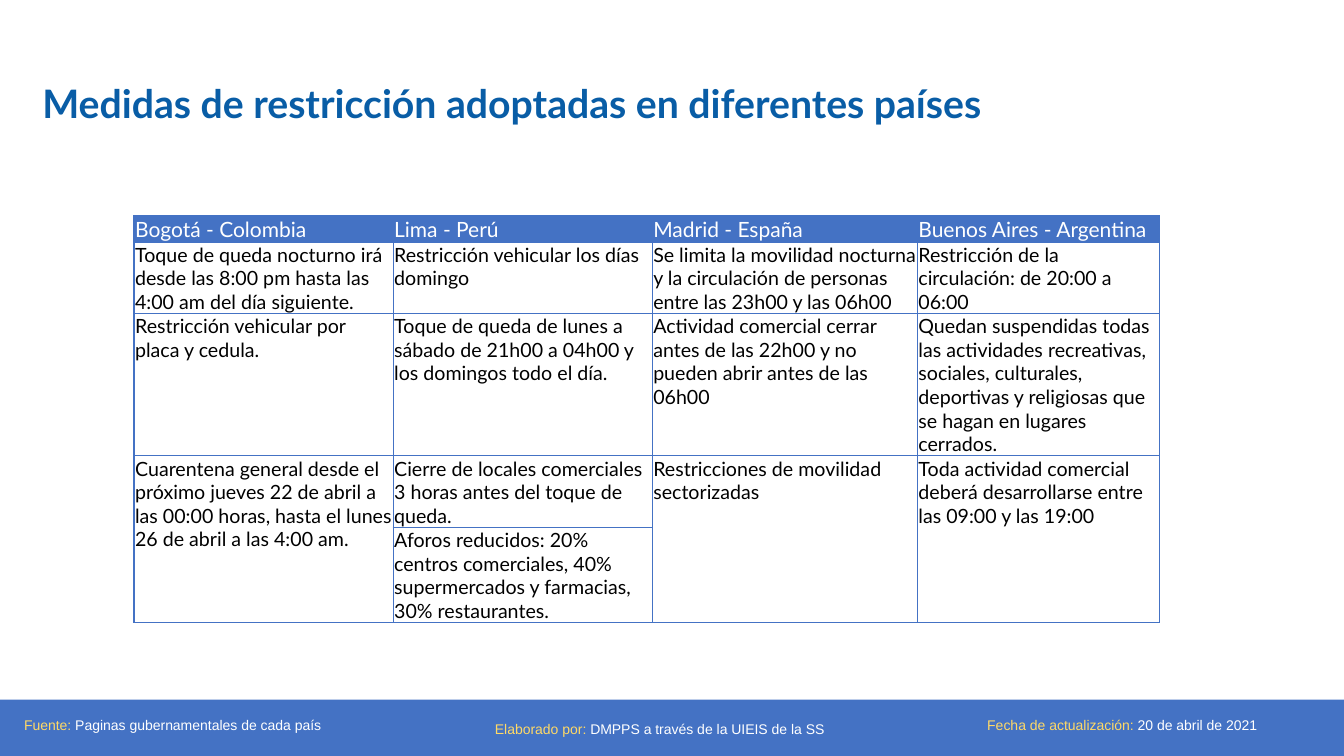
from dataclasses import dataclass
from lxml import etree
from pptx import Presentation, util as u
from pptx.dml.color import RGBColor
from pptx.enum import shapes, text
from pptx.oxml.ns import qn


@dataclass(frozen=True)
class Theme:
    blue: str = "4472C4"
    title_blue: str = "095DA6"
    gold: str = "FFD966"
    white: str = "FFFFFF"
    black: str = "000000"
    heading_font: str = "Lato"
    footer_font: str = "Arial"
    title_size: int = 28
    header_size: int = 15
    cell_size: int = 14
    footer_size: int = 10
    border_width: int = 1


MEASURES = [
    ["Bogotá - Colombia", "Lima - Perú", "Madrid - España", "Buenos Aires - Argentina"],
    ["Toque de queda nocturno irá desde las 8:00 pm hasta las 4:00 am del día siguiente.",
     "Restricción vehicular los días domingo",
     "Se limita la movilidad nocturna y la circulación de personas entre las 23h00 y las 06h00",
     "Restricción de la circulación: de 20:00 a 06:00"],
    ["Restricción vehicular por placa y cedula.",
     "Toque de queda de lunes a sábado de 21h00 a 04h00 y los domingos todo el día.",
     "Actividad comercial cerrar antes de las 22h00 y no pueden abrir antes de las 06h00",
     "Quedan suspendidas todas las actividades recreativas, sociales, culturales, "
     "deportivas y religiosas que se hagan en lugares cerrados."],
    ["Cuarentena general desde el próximo jueves 22 de abril a las 00:00 horas, "
     "hasta el lunes 26 de abril a las 4:00 am.",
     "Cierre de locales comerciales 3 horas antes del toque de queda.",
     "Restricciones de movilidad sectorizadas",
     "Toda actividad comercial deberá desarrollarse entre las 09:00 y las 19:00"],
    [None,
     "Aforos reducidos: 20% centros comerciales, 40% supermercados y farmacias, 30% restaurantes.",
     None, None],
]
COLUMN_WIDTHS = [2.57, 2.57, 2.63, 2.4]
ROW_HEIGHTS = [0.25, 0.7, 1.4, 0.7, 0.93]
FOOTER_NOTES = [
    ("Fuente: ", "Paginas gubernamentales de cada país",
     (0.14, 7, 4.32, 0.4), text.PP_ALIGN.LEFT),
    ("Elaborado por: ", "DMPPS a través de la UIEIS de la SS",
     (4.81, 7.04, 4.32, 0.4), text.PP_ALIGN.LEFT),
    ("Fecha de actualización: ", "20 de abril de 2021",
     (9.25, 6.93, 3.76, 0.55), text.PP_ALIGN.CENTER),
]


def apply(target, values):
    for name, value in values.items():
        setattr(target, name, value)


def inches(place):
    return [u.Inches(length) for length in place]


class SlideBuilder:
    def __init__(self, slide, theme):
        self.slide = slide
        self.theme = theme

    def paint(self, fill, color):
        fill.solid()
        fill.fore_color.rgb = RGBColor.from_string(color)

    def add_words(self, paragraph, wording, size, face, color, bold=False):
        run = paragraph.add_run()
        run.text = wording
        apply(run.font, {"size": u.Pt(size), "name": face, "bold": bold})
        run.font.color.rgb = RGBColor.from_string(color)

    def title(self, wording, place):
        heading = self.slide.shapes.title
        apply(heading, dict(zip(("left", "top", "width", "height"), inches(place))))
        self.paint(heading.fill, self.theme.white)
        self.paint(heading.line.fill, self.theme.white)
        heading.line.width = u.Pt(0.75)
        apply(heading.text_frame, {"word_wrap": True,
                                   "auto_size": text.MSO_AUTO_SIZE.NONE,
                                   "vertical_anchor": text.MSO_ANCHOR.TOP})
        paragraph = heading.text_frame.paragraphs[0]
        apply(paragraph, {"alignment": text.PP_ALIGN.LEFT, "line_spacing": 0.9,
                          "space_before": u.Pt(0)})
        self.add_words(paragraph, wording, self.theme.title_size,
                       self.theme.heading_font, self.theme.title_blue, True)

    def bar(self, place):
        band = self.slide.shapes.add_shape(shapes.MSO_SHAPE.RECTANGLE, *inches(place))
        band.shadow.inherit = False
        self.paint(band.fill, self.theme.blue)
        band.line.fill.background()

    def note(self, label, detail, place, alignment):
        frame = self.slide.shapes.add_textbox(*inches(place)).text_frame
        apply(frame, {"word_wrap": True, "vertical_anchor": text.MSO_ANCHOR.MIDDLE})
        paragraph = frame.paragraphs[0]
        apply(paragraph, {"alignment": alignment, "line_spacing": 0.9})
        for wording, color in ((label, self.theme.gold), (detail, self.theme.white)):
            self.add_words(paragraph, wording, self.theme.footer_size,
                           self.theme.footer_font, color)

    def outline(self, cell):
        properties = cell._tc.get_or_add_tcPr()
        for position, side in enumerate(("lnL", "lnR", "lnT", "lnB")):
            edge = etree.Element(qn(f"a:{side}"), w=str(u.Pt(self.theme.border_width)))
            fill = etree.SubElement(edge, qn("a:solidFill"))
            etree.SubElement(fill, qn("a:srgbClr"), val=self.theme.blue)
            properties.insert(position, edge)

    def table(self, rows, widths, heights, left, top):
        place = inches((left, top, sum(widths), sum(heights)))
        grid = self.slide.shapes.add_table(len(rows), len(widths), *place).table
        apply(grid, {"first_row": False, "horz_banding": False})
        for column, width in zip(grid.columns, widths):
            column.width = u.Inches(width)
        for row, height in zip(grid.rows, heights):
            row.height = u.Inches(height)
        for r, row in enumerate(rows):
            for c, wording in enumerate(row):
                self.cell(grid.cell(r, c), wording, r == 0)
                if wording is None:
                    grid.cell(r - 1, c).merge(grid.cell(r, c))

    def cell(self, cell, wording, is_header):
        theme = self.theme
        margin = u.Inches(0.01)
        apply(cell, {"margin_left": margin, "margin_right": margin,
                     "margin_top": margin, "margin_bottom": 0,
                     "vertical_anchor": text.MSO_ANCHOR.BOTTOM if is_header
                     else text.MSO_ANCHOR.TOP})
        if is_header:
            self.paint(cell.fill, theme.blue)
        else:
            cell.fill.background()
        self.outline(cell)
        if wording:
            self.add_words(cell.text_frame.paragraphs[0], wording,
                           theme.header_size if is_header else theme.cell_size,
                           theme.heading_font, theme.white if is_header else theme.black)


def main():
    deck = Presentation()
    apply(deck, {"slide_width": u.Inches(13.33), "slide_height": u.Inches(7.5)})
    page = SlideBuilder(deck.slides.add_slide(deck.slide_layouts[5]), Theme())
    page.title("Medidas de restricción adoptadas en diferentes países",
               (0.32, 0.79, 10.05, 1.35))
    page.bar((0, 6.94, 13.33, 0.56))
    for footer_note in FOOTER_NOTES:
        page.note(*footer_note)
    page.table(MEASURES, COLUMN_WIDTHS, ROW_HEIGHTS, 1.33, 2.14)
    deck.save("out.pptx")


if __name__ == "__main__":
    main()
